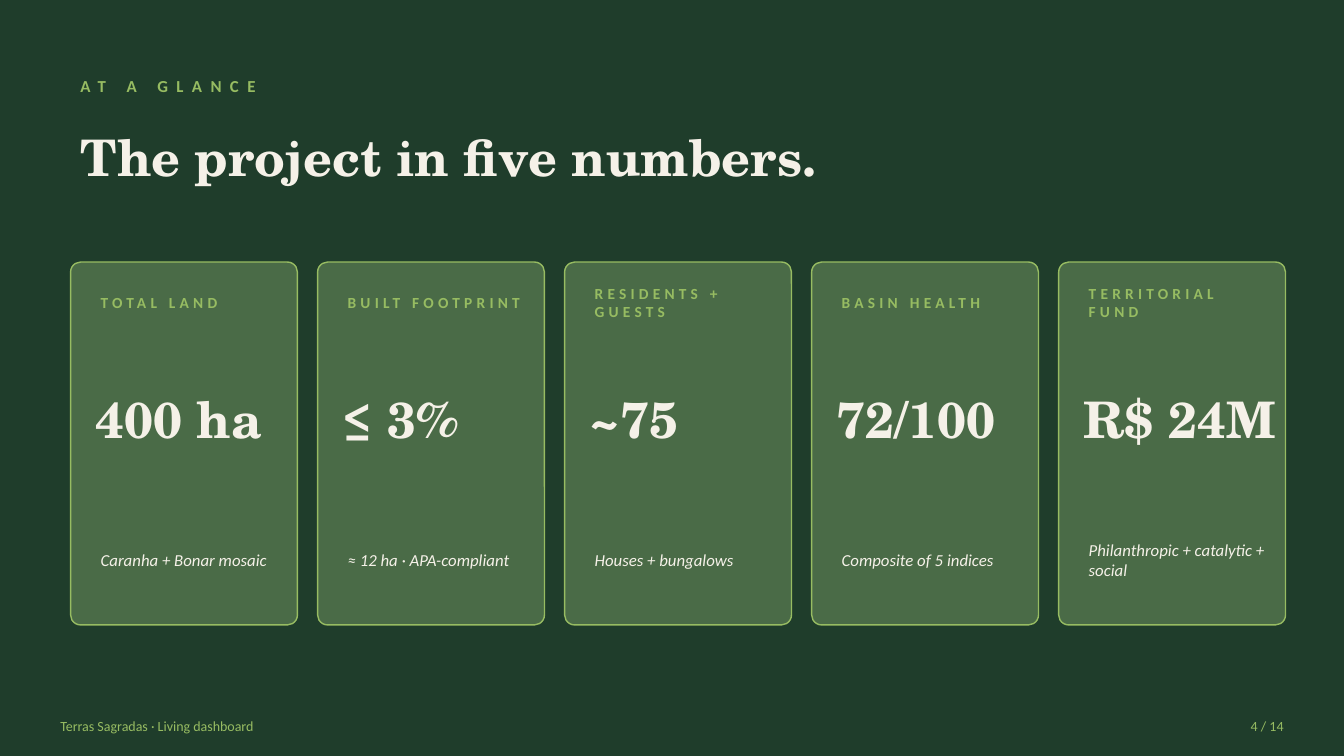
import pptx
import pptx.util
from pptx.dml.color import RGBColor
from pptx.enum.shapes import MSO_SHAPE
from pptx.enum.text import MSO_ANCHOR, MSO_AUTO_SIZE, PP_ALIGN

FOREST = RGBColor(0x1F, 0x3D, 0x2B)
MOSS = RGBColor(0x4A, 0x6B, 0x47)
LEAF = RGBColor(0x97, 0xBC, 0x62)
CREAM = RGBColor(0xF5, 0xF1, 0xE8)
SANS = "Calibri"
SERIF = "TeX Gyre Schola"

SLIDE_WIDTH, SLIDE_HEIGHT = 13.33, 7.5
MARGIN = 0.7
CARD_TOP, CARD_WIDTH, CARD_HEIGHT, CARD_GAP = 2.6, 2.25, 3.6, 0.2
CARD_PITCH = CARD_WIDTH + CARD_GAP
FOOTER_TOP, FOOTER_MARGIN, PAGE_WIDTH = 7.05, 0.5, 1

CARDS = [
    ("TOTAL LAND", "400 ha", "Caranha + Bonar mosaic"),
    ("BUILT FOOTPRINT", "≤ 3%", "≈ 12 ha · APA-compliant"),
    ("RESIDENTS + GUESTS", "~75", "Houses + bungalows"),
    ("BASIN HEALTH", "72/100", "Composite of 5 indices"),
    ("TERRITORIAL FUND", "R$ 24M", "Philanthropic + catalytic + social"),
]


def inches(*lengths):
    return [pptx.util.Inches(length) for length in lengths]


def write(shape, text, size, color, name=SANS, bold=False, italic=False,
          spacing=0, align=PP_ALIGN.LEFT):
    """Fill a shape with one formatted paragraph; spacing is in points."""
    frame = shape.text_frame
    frame.word_wrap = True
    frame.auto_size = MSO_AUTO_SIZE.NONE
    frame.vertical_anchor = MSO_ANCHOR.MIDDLE
    paragraph = frame.paragraphs[0]
    paragraph.alignment = align
    run = paragraph.add_run()
    run.text = text
    if spacing:
        run._r.get_or_add_rPr().set("spc", str(spacing * 100))
    font = paragraph.font
    font.name, font.size = name, pptx.util.Pt(size)
    font.bold, font.italic = bold, italic
    font.color.rgb = color


def add_text(slide, box, text, size, color, **style):
    shape = slide.shapes.add_textbox(*inches(*box))
    write(shape, text, size, color, **style)
    return shape


def add_title(slide, text):
    title = slide.shapes.title
    title.left, title.top, title.width, title.height = inches(MARGIN, 1.05, 12, 1)
    write(title, text, 36, CREAM, name=SERIF, bold=True)


def add_card(slide, column, label, value, note):
    left = MARGIN + column * CARD_PITCH
    card = slide.shapes.add_shape(
        MSO_SHAPE.ROUNDED_RECTANGLE, *inches(left, CARD_TOP, CARD_WIDTH, CARD_HEIGHT))
    card.adjustments[0] = 0.044
    card.shadow.inherit = False
    card.fill.solid()
    card.fill.fore_color.rgb = MOSS
    card.line.color.rgb = LEAF
    card.line.width = pptx.util.Pt(1)

    add_text(slide, (left + 0.2, CARD_TOP + 0.2, 2, 0.4), label, 11, LEAF,
             bold=True, spacing=3)
    number = add_text(slide, (left + 0.15, CARD_TOP + 0.8, 2.1, 1.5), value, 36,
                      CREAM, name=SERIF, bold=True)
    number.text_frame.word_wrap = False
    number.text_frame.auto_size = MSO_AUTO_SIZE.SHAPE_TO_FIT_TEXT
    add_text(slide, (left + 0.2, CARD_TOP + 2.4, 2, 1.1), note, 12, CREAM, italic=True)


def add_footer(slide, text, page):
    add_text(slide, (FOOTER_MARGIN, FOOTER_TOP, 8, 0.3), text, 10, LEAF)
    page_left = SLIDE_WIDTH - FOOTER_MARGIN - PAGE_WIDTH
    add_text(slide, (page_left, FOOTER_TOP, PAGE_WIDTH, 0.3), page, 10, LEAF,
             align=PP_ALIGN.RIGHT)


def main():
    presentation = pptx.Presentation()
    presentation.slide_width, presentation.slide_height = inches(SLIDE_WIDTH, SLIDE_HEIGHT)
    title_only = presentation.slide_layouts[5]
    slide = presentation.slides.add_slide(title_only)
    slide.background.fill.solid()
    slide.background.fill.fore_color.rgb = FOREST

    add_text(slide, (MARGIN, 0.7, 10, 0.3), "AT A GLANCE", 12, LEAF, bold=True, spacing=6)
    add_title(slide, "The project in five numbers.")
    for column, card in enumerate(CARDS):
        add_card(slide, column, *card)
    add_footer(slide, "Terras Sagradas · Living dashboard", "4 / 14")
    presentation.save("out.pptx")


if __name__ == "__main__":
    main()
